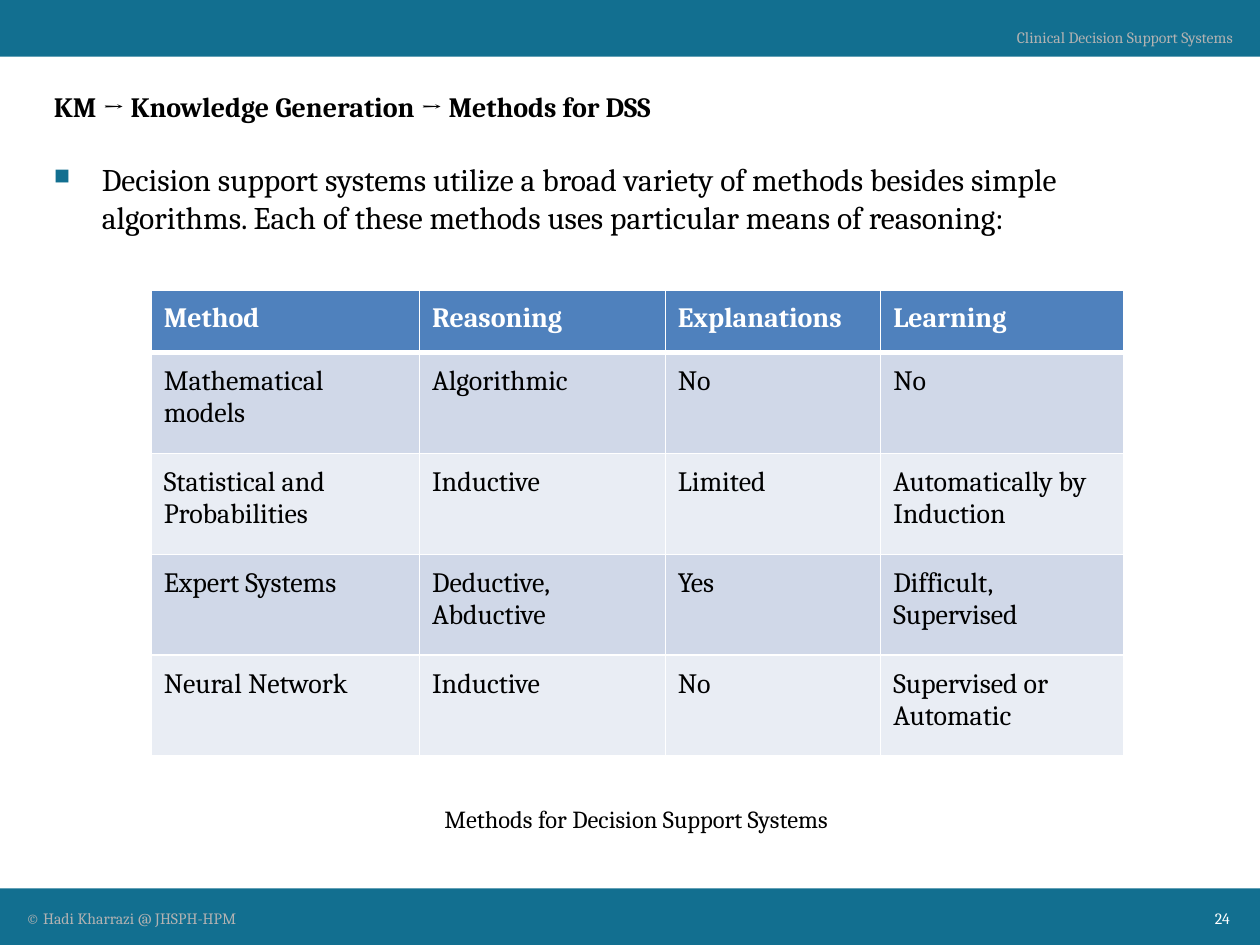
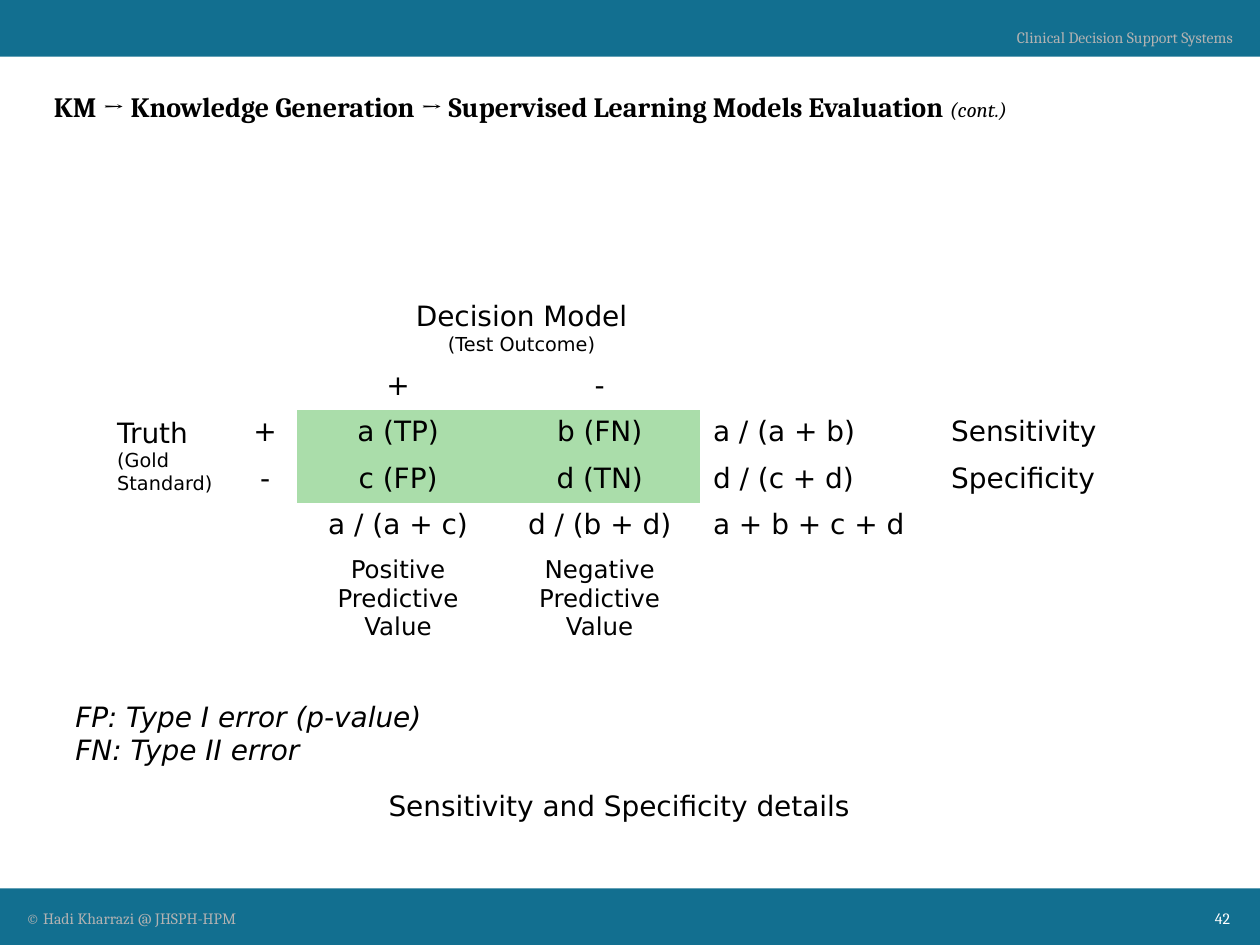
from lxml.etree import SubElement
from pptx import Presentation
from pptx.dml.color import RGBColor
from pptx.enum.shapes import MSO_SHAPE as SHAPE
from pptx.enum.text import MSO_ANCHOR as ANCHOR, PP_ALIGN as ALIGN
from pptx.oxml.ns import qn
from pptx.util import Inches, Pt

TEAL = RGBColor(0x12, 0x6F, 0x90)
GRAY = RGBColor(0xB2, 0xB2, 0xB2)
WHITE = RGBColor(0xFF, 0xFF, 0xFF)
BLACK = RGBColor(0, 0, 0)
BLUE = RGBColor(0x4F, 0x81, 0xBD)
BAND_DARK = RGBColor(0xD0, 0xD8, 0xE8)
BAND_LIGHT = RGBColor(0xE9, 0xED, 0xF4)
GREEN = RGBColor(0xAA, 0xDD, 0xAA)
SERIF = "Cambria"
SANS = "DejaVu Sans"
PLAIN_TABLE = "{2D5ABB26-0587-4C30-8999-92F81FD0307C}"

METHODS = [
    ["Method", "Reasoning", "Explanations", "Learning"],
    ["Mathematical models", "Algorithmic", "No", "No"],
    ["Statistical and Probabilities", "Inductive", "Limited",
     "Automatically by Induction"],
    ["Expert Systems", "Deductive, Abductive", "Yes", "Difficult, Supervised"],
    ["Neural Network", "Inductive", "No", "Supervised or Automatic"],
]
OUTCOMES = [
    ["Decision Model\n(Test Outcome)", "", "", "", "", ""],
    ["", "", "+", "-", "", ""],
    ["Truth\n(Gold Standard)", "+", "a (TP)", "b (FN)", "a / (a + b)",
     "Sensitivity"],
    ["", "-", "c (FP)", "d (TN)", "d / (c + d)", "Specificity"],
    ["", "", "a / (a + c)", "d / (b + d)", "a + b + c + d", ""],
    ["", "", "Positive Predictive Value", "Negative Predictive Value", "", ""],
]


def style(r, size, font=SERIF, color=BLACK, bold=False, italic=False):
    """Format one run."""
    r.font.size, r.font.name = Pt(size), font
    r.font.color.rgb = color
    r.font.bold, r.font.italic = bold, italic


def add_text(s, box, text, size, align=ALIGN.LEFT, **look):
    """Add a wrapped text box at box and return its text frame."""
    tf = s.shapes.add_textbox(*map(Inches, box)).text_frame
    tf.word_wrap = True
    tf.text = text
    for p in tf.paragraphs:
        p.alignment = align
        for r in p.runs:
            style(r, size, **look)
    return tf


def add_frame(prs, title, number, note=""):
    """Add a slide with its bands, footer, page number and title."""
    s = prs.slides.add_slide(prs.slide_layouts[6])
    for top in (0, 7.05):
        band = s.shapes.add_shape(SHAPE.RECTANGLE, 0, Inches(top),
                                  prs.slide_width, Inches(0.45))
        band.shadow.inherit = False
        band.fill.solid()
        band.fill.fore_color.rgb = TEAL
        band.line.fill.background()
    add_text(s, (0.11, 7.16, 6.21, 0.25), "© Hadi Kharrazi @ JHSPH-HPM", 9,
             color=GRAY)
    add_text(s, (7.74, 0.17, 2.14, 0.25), "Clinical Decision Support Systems",
             9, ALIGN.RIGHT, color=GRAY)
    add_text(s, (9.21, 7.16, 0.65, 0.25), str(number), 9, ALIGN.RIGHT,
             color=WHITE)
    tf = add_text(s, (0.33, 0.66, 9.33, 0.4), title, 16, bold=True)
    if note:
        r = tf.paragraphs[0].add_run()
        r.text = note
        style(r, 12, italic=True)
    return s


def add_bullet(p):
    """Give a paragraph a hanging square bullet."""
    pPr = p._p.get_or_add_pPr()
    pPr.set("marL", str(Inches(0.38)))
    pPr.set("indent", str(-Inches(0.38)))
    color = SubElement(pPr, qn("a:buClr"))
    SubElement(color, qn("a:srgbClr"), val=str(TEAL))
    SubElement(pPr, qn("a:buSzPct"), val="70000")
    SubElement(pPr, qn("a:buChar"), char="■")


def add_grid(s, left, top, widths, heights):
    """Add an unstyled table with the given column widths and row heights."""
    box = map(Inches, (left, top, sum(widths), sum(heights)))
    table = s.shapes.add_table(len(heights), len(widths), *box).table
    table.first_row = table.horz_banding = False
    table._tbl.tblPr.find(qn("a:tableStyleId")).text = PLAIN_TABLE
    for column, width in zip(table.columns, widths):
        column.width = Inches(width)
    for row, height in zip(table.rows, heights):
        row.height = Inches(height)
    return table


def fill_cell(cell, color):
    """Fill a cell with one colour."""
    cell.fill.solid()
    cell.fill.fore_color.rgb = color


def add_borders(cell, **widths):
    """Draw white cell borders, widths in points keyed by side."""
    tcPr = cell._tc.get_or_add_tcPr()
    for side in "LRTB":
        ln = SubElement(tcPr, qn(f"a:ln{side}"), w=str(Pt(widths.get(side, 1))))
        fill = SubElement(ln, qn("a:solidFill"))
        SubElement(fill, qn("a:srgbClr"), val=str(WHITE))


def add_methods_table(s, left, top):
    """Add the banded table of reasoning methods."""
    table = add_grid(s, left, top, [2.13, 1.95, 1.71, 1.93], [0.5] + [0.8] * 4)
    for i, row in enumerate(METHODS):
        for j, text in enumerate(row):
            cell = table.cell(i, j)
            cell.margin_top = cell.margin_bottom = Inches(0.1)
            cell.text = text
            style(cell.text_frame.paragraphs[0].runs[0], 16, bold=i == 0,
                  color=BLACK if i else WHITE)
            add_borders(cell, T=3 if i == 1 else 1, B=1 if i else 3)
            fill_cell(cell, (BAND_DARK if i % 2 else BAND_LIGHT) if i else BLUE)


def add_outcome_table(s, left, top):
    """Add the table of test outcomes against the truth."""
    table = add_grid(s, left, top, [1.02, 0.51, 1.6, 1.6, 1.89, 1.54],
                     [0.55] + [0.37] * 4 + [0.8])
    table.cell(0, 0).merge(table.cell(0, 4))
    table.cell(2, 0).merge(table.cell(3, 0))
    for i, row in enumerate(OUTCOMES):
        for j, text in enumerate(row):
            cell = table.cell(i, j)
            if not text:
                p = cell.text_frame.paragraphs[0]
                SubElement(p._p, qn("a:endParaRPr"), sz="1400")
                continue
            cell.text = text
            if j == 0:
                cell.vertical_anchor = ANCHOR.MIDDLE
            for k, p in enumerate(cell.text_frame.paragraphs):
                if i == 0 or j in (1, 2, 3):
                    p.alignment = ALIGN.CENTER
                size = 11 if k else 14 if i == 5 else 16
                style(p.runs[0], size, SANS)
            if i in (2, 3) and j in (2, 3):
                fill_cell(cell, GREEN)


def methods_slide(prs):
    """Build the slide on methods for decision support."""
    s = add_frame(prs, "KM → Knowledge Generation → Methods for DSS", 24)
    tf = add_text(s, (0.33, 1.22, 9.33, 0.8),
                  "Decision support systems utilize a broad variety of methods "
                  "besides simple algorithms. Each of these methods uses "
                  "particular means of reasoning:", 18)
    add_bullet(tf.paragraphs[0])
    add_methods_table(s, 1.2, 2.3)
    add_text(s, (0.51, 6.33, 9.08, 0.34),
             "Methods for Decision Support Systems", 14, ALIGN.CENTER)


def evaluation_slide(prs):
    """Build the slide on sensitivity and specificity."""
    s = add_frame(prs, "KM → Knowledge Generation → Supervised Learning "
                  "Models Evaluation ", 42, "(cont.)")
    add_outcome_table(s, 0.83, 2.33)
    add_text(s, (0.5, 5.5, 3.25, 0.64),
             "FP: Type I error (p-value)\nFN: Type II error", 16,
             font=SANS, italic=True)
    add_text(s, (1.04, 6.21, 7.75, 0.37), "Sensitivity and Specificity details",
             16, ALIGN.CENTER, font=SANS)


def main():
    """Build and save the deck."""
    prs = Presentation()
    prs.slide_width, prs.slide_height = Inches(10), Inches(7.5)
    methods_slide(prs)
    evaluation_slide(prs)
    prs.save("out.pptx")


if __name__ == "__main__":
    main()
